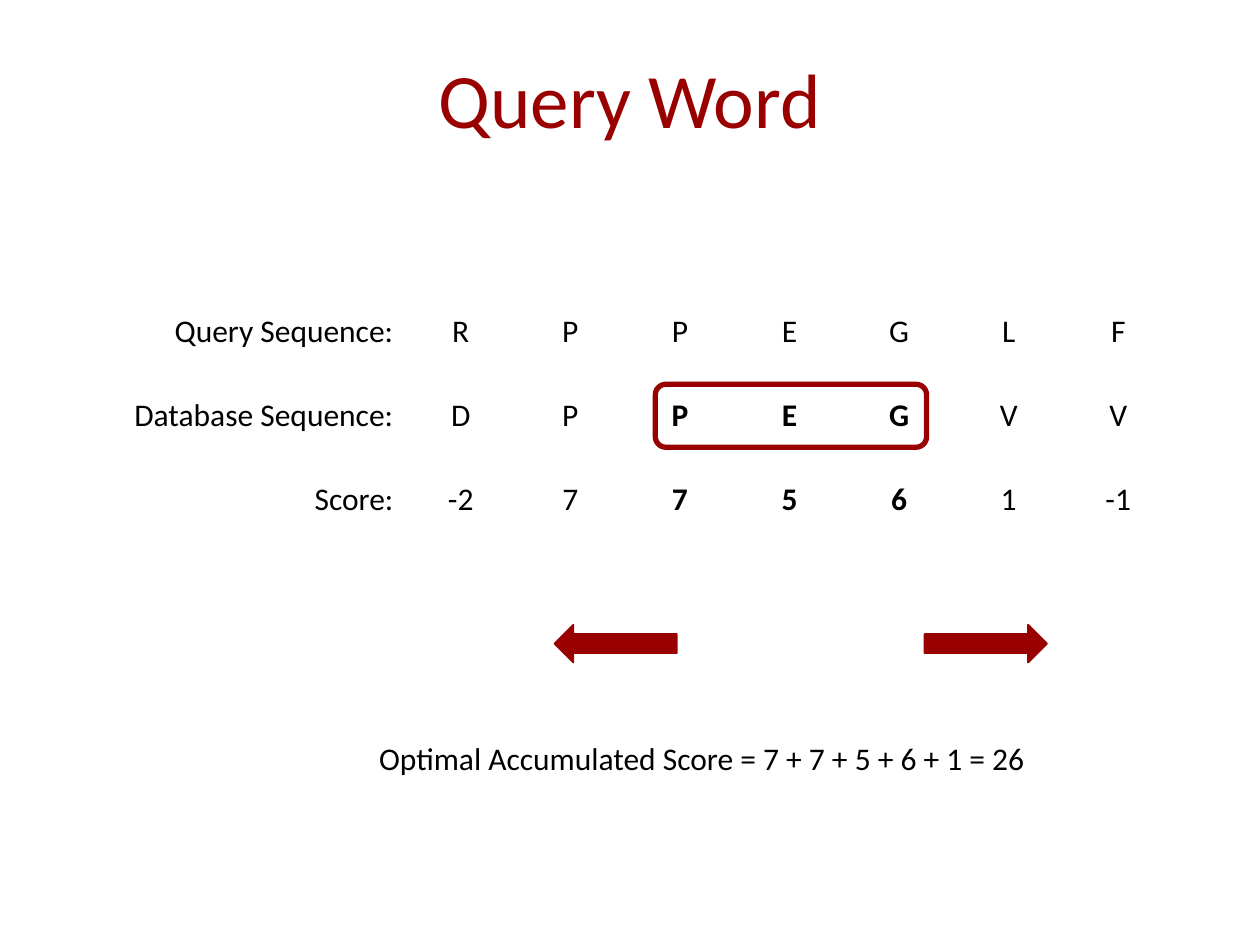
from pptx import Presentation
from pptx.dml.color import RGBColor
from pptx.enum import shapes, text
from pptx.util import Pt

RED = RGBColor(0x99, 0x00, 0x00)
BLACK = RGBColor(0x00, 0x00, 0x00)
FONT = "Calibri"

ROWS = [
    ("Query Sequence:", "R", "P", "P", "E", "G", "L", "F"),
    ("Database Sequence:", "D", "P", "P", "E", "G", "V", "V"),
    ("Score:", "-2", "7", "7", "5", "6", "1", "-1"),
]
WORD_COLUMNS = range(3, 6)
LABEL_WIDTH = 199.5


def write(tf, content, size=18, color=BLACK, bold=False, align=text.PP_ALIGN.LEFT):
    p = tf.paragraphs[0]
    p.alignment = align
    r = p.add_run()
    r.text = content
    r.font.name = FONT
    r.font.size = Pt(size)
    r.font.bold = bold
    r.font.color.rgb = color
    return p


def add_title(slide, left, top, width, height):
    sp = slide.shapes.title
    sp.left, sp.top, sp.width, sp.height = map(Pt, (left, top, width, height))
    tf = sp.text_frame
    tf.vertical_anchor = text.MSO_ANCHOR.MIDDLE
    p = write(tf, "Query Word", size=44, color=RED, align=text.PP_ALIGN.CENTER)
    p.line_spacing = 0.9


def add_red_shape(slide, kind, left, top, width, height, line, filled=True):
    sp = slide.shapes.add_shape(kind, Pt(left), Pt(top), Pt(width), Pt(height))
    sp.shadow.inherit = False
    if filled:
        sp.fill.solid()
        sp.fill.fore_color.rgb = RED
    else:
        sp.fill.background()
    sp.line.color.rgb = RED
    sp.line.width = Pt(line)


def add_alignment(slide, left, top, width, height):
    """Table of the aligned sequences, with a frame round the query word."""
    columns = len(ROWS[0])
    table = slide.shapes.add_table(
        len(ROWS), columns, Pt(left), Pt(top), Pt(width), Pt(height)).table
    table.first_row = table.horz_banding = False
    letter_width = (width - LABEL_WIDTH) / (columns - 1)
    for c, column in enumerate(table.columns):
        column.width = Pt(letter_width if c else LABEL_WIDTH)
    for r, row in enumerate(ROWS):
        for c, content in enumerate(row):
            cell = table.cell(r, c)
            cell.fill.background()
            cell.vertical_anchor = text.MSO_ANCHOR.MIDDLE
            write(cell.text_frame, content,
                  bold=r > 0 and c in WORD_COLUMNS,
                  align=text.PP_ALIGN.CENTER if c else text.PP_ALIGN.RIGHT)
    add_red_shape(slide, shapes.MSO_SHAPE.ROUNDED_RECTANGLE,
                  left + 342, top + 54, 155, 36, line=3, filled=False)


def add_extension_arrows(slide, left, top, width, height):
    """Arrows at both ends of the box, pointing outwards."""
    arrow_width = 70
    for kind, x in ((shapes.MSO_SHAPE.LEFT_ARROW, left),
                    (shapes.MSO_SHAPE.RIGHT_ARROW, left + width - arrow_width)):
        add_red_shape(slide, kind, x, top, arrow_width, height, line=1)


def add_score(slide, left, top, width, height):
    tf = slide.shapes.add_textbox(Pt(left), Pt(top), Pt(width), Pt(height)).text_frame
    tf.word_wrap = False
    tf.auto_size = text.MSO_AUTO_SIZE.SHAPE_TO_FIT_TEXT
    write(tf, "Optimal Accumulated Score = 7 + 7 + 5 + 6 + 1 = 26")


def main():
    prs = Presentation()
    prs.slide_width, prs.slide_height = Pt(720), Pt(540)
    slide = prs.slides.add_slide(prs.slide_layouts[5])
    add_title(slide, 49.5, 28.5, 621, 61.5)
    add_alignment(slide, 32.5, 165.6, 638, 144)
    add_extension_arrows(slide, 316.8, 357, 281.5, 21.6)
    add_score(slide, 209.5, 418.5, 389, 29)
    prs.save("out.pptx")


if __name__ == "__main__":
    main()
